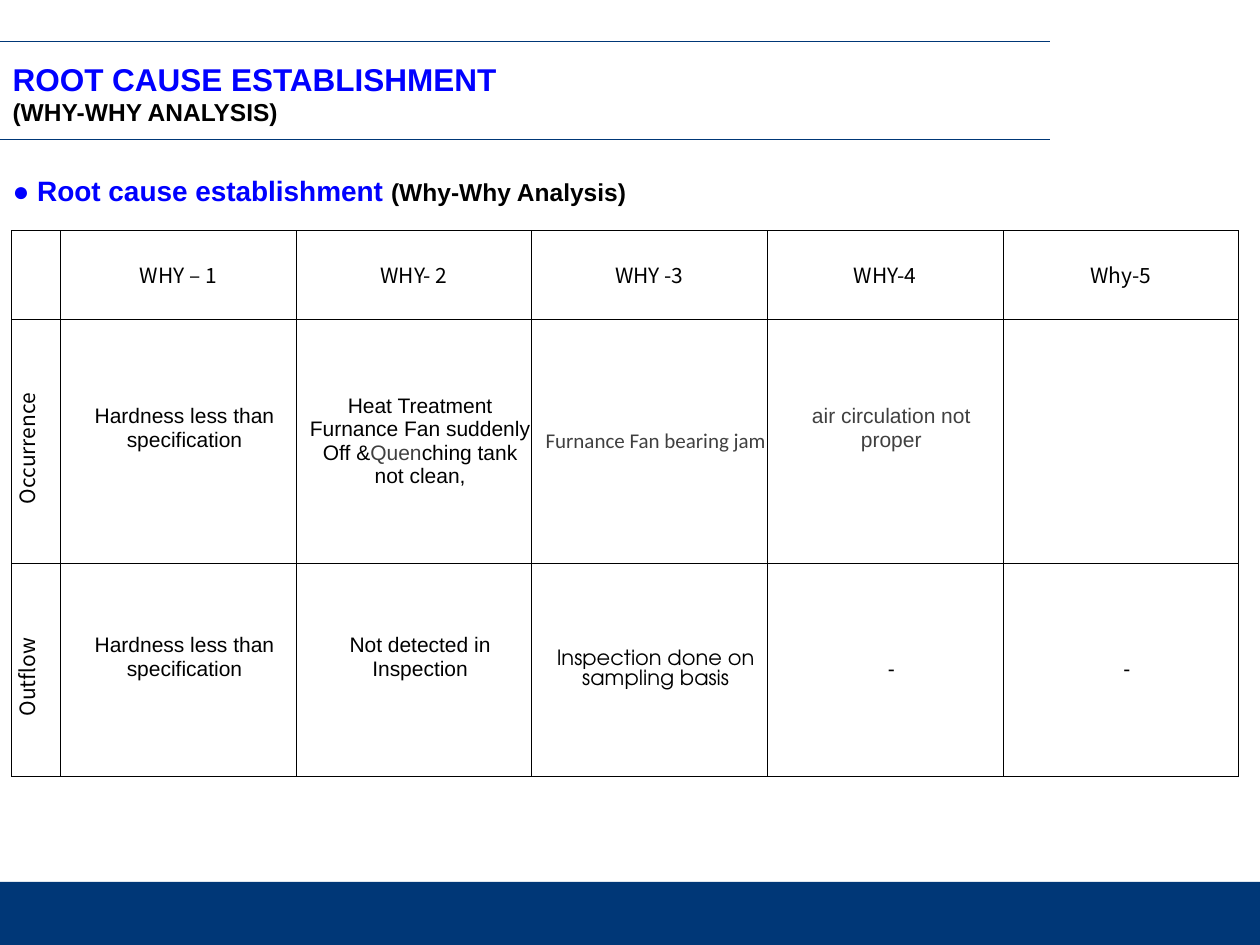
import pptx
import pptx.util
import pptx.dml.color
import pptx.enum.shapes
import pptx.enum.text
import pptx.oxml
import pptx.oxml.ns

Inches, Pt = pptx.util.Inches, pptx.util.Pt
ALIGN = pptx.enum.text.PP_ALIGN
ANCHOR = pptx.enum.text.MSO_ANCHOR

COLORS = {"navy": "003777", "blue": "0000FF", "black": "000000",
          "gray": "404040", "white": "FFFFFF"}
HEAD_FONT = "Noto Sans CJK JP"
SLIDE_W, SLIDE_H = 10, 7.5

# Runs: (text, size, font, colour, bold)
TITLE = [("ROOT CAUSE ESTABLISHMENT \v", 18, "Arial", "blue", True),
         ("(WHY-WHY ANALYSIS)", 14, "Arial", "black", True)]
SUBTITLE = [("● Root cause establishment ", 16, "Arial", "blue", True),
            ("(Why-Why Analysis)", 14, "Arial", "black", True)]

HEADERS = ["WHY – 1", "WHY- 2", "WHY -3", "WHY-4", "Why-5"]
# Each answer: its runs as (text, font, colour), then whether it sits raised
HARDNESS = ([("Hardness less than specification", "Arial", "black")], True)
DASH = ([("-", "Arial", "black")], False)
ANALYSIS = {
    "Occurrence": [
        HARDNESS,
        ([("Heat Treatment Furnance Fan suddenly Off &", "Arial", "black"),
          ("Quen", "Arial", "gray"),
          ("ching tank not clean,", "Arial", "black")], False),
        ([("Furnance Fan bearing jam", "Calibri", "gray")], False),
        ([("air circulation not proper", "Arial", "gray")], True),
        ([], False),
    ],
    "Outflow": [
        HARDNESS,
        ([("Not detected in Inspection", "Arial", "black")], True),
        ([("Inspection done on sampling basis", "TeX Gyre Adventor", "black")], False),
        DASH,
        DASH,
    ],
}
TABLE_LEFT, TABLE_TOP = 0.09, 1.83
COLUMN_WIDTHS = [0.39] + [1.87] * len(HEADERS)
ROW_HEIGHTS = [0.7, 1.94, 1.69]
RULE_HEIGHTS = [0.33, 1.11]
FOOTER_H = 0.5


def rgb(name):
    return pptx.dml.color.RGBColor.from_string(COLORS[name])


def add_runs(paragraph, runs):
    for text, size, font, color, bold in runs:
        run = paragraph.add_run()
        run.text = text.rstrip("\v")
        run.font.size, run.font.name, run.font.bold = Pt(size), font, bold
        run.font.color.rgb = rgb(color)
        if text.endswith("\v"):
            paragraph.add_line_break()


def fill_placeholder(holder, box, runs, anchor):
    holder.left, holder.top, holder.width, holder.height = map(Inches, box)
    frame = holder.text_frame
    frame.auto_size = pptx.enum.text.MSO_AUTO_SIZE.NONE
    frame.word_wrap = True
    frame.vertical_anchor = anchor
    paragraph = frame.paragraphs[0]
    paragraph.alignment = ALIGN.LEFT
    paragraph.space_before = Pt(0)
    props = paragraph._p.get_or_add_pPr()
    props.set("marL", "0")
    props.set("indent", "0")
    props.append(props.makeelement(pptx.oxml.ns.qn("a:buNone"), {}))
    add_runs(paragraph, runs)


def add_borders(cell):
    props = cell._tc.get_or_add_tcPr()
    for index, side in enumerate(("lnL", "lnR", "lnT", "lnB")):
        props.insert(index, pptx.oxml.parse_xml(
            f'<a:{side} {pptx.oxml.ns.nsdecls("a")} w="{Pt(0.25)}"><a:solidFill>'
            f'<a:srgbClr val="{COLORS["black"]}"/></a:solidFill></a:{side}>'))


def fill_cell(cell, runs, left=0, right=0, bottom=0):
    cell.vertical_anchor = ANCHOR.MIDDLE
    cell.margin_left, cell.margin_right = Inches(left), Inches(right)
    cell.margin_top, cell.margin_bottom = 0, Inches(bottom)
    paragraph = cell.text_frame.paragraphs[0]
    paragraph.alignment = ALIGN.CENTER
    add_runs(paragraph, [(text, 12, font, color, False) for text, font, color in runs])


def add_why_table(slide):
    table = slide.shapes.add_table(
        len(ROW_HEIGHTS), len(COLUMN_WIDTHS), Inches(TABLE_LEFT), Inches(TABLE_TOP),
        Inches(sum(COLUMN_WIDTHS)), Inches(sum(ROW_HEIGHTS))).table
    table.first_row = table.horz_banding = False
    for column, width in zip(table.columns, COLUMN_WIDTHS):
        column.width = Inches(width)
    for row, height in zip(table.rows, ROW_HEIGHTS):
        row.height = Inches(height)
    for cell in table.iter_cells():
        cell.fill.solid()
        cell.fill.fore_color.rgb = rgb("white")
        add_borders(cell)

    for col, header in enumerate(HEADERS, 1):
        fill_cell(table.cell(0, col), [(header, HEAD_FONT, "black")])
    for row, (label, answers) in enumerate(ANALYSIS.items(), 1):
        label_cell = table.cell(row, 0)
        fill_cell(label_cell, [(label, HEAD_FONT, "black")], right=0.12)
        label_cell._tc.get_or_add_tcPr().set("vert", "vert270")
        for col, (runs, raised) in enumerate(answers, 1):
            fill_cell(table.cell(row, col), runs, left=0.1, bottom=0.2 if raised else 0)


def add_frame(slide):
    """Draw the footer band and the two rules around the title."""
    footer = slide.shapes.add_shape(
        pptx.enum.shapes.MSO_SHAPE.RECTANGLE, 0, Inches(SLIDE_H - FOOTER_H),
        Inches(SLIDE_W), Inches(FOOTER_H))
    footer.shadow.inherit = False
    footer.fill.solid()
    footer.fill.fore_color.rgb = rgb("navy")
    footer.line.fill.background()
    for y in RULE_HEIGHTS:
        rule = slide.shapes.add_connector(
            pptx.enum.shapes.MSO_CONNECTOR.STRAIGHT, 0, Inches(y),
            Inches(SLIDE_W * 5 / 6), Inches(y))
        rule.line.color.rgb = rgb("navy")
        rule.line.width = Pt(0.75)
        props = rule._element.spPr
        props.append(props.makeelement(pptx.oxml.ns.qn("a:effectLst"), {}))


def main():
    deck = pptx.Presentation()
    deck.slide_width, deck.slide_height = Inches(SLIDE_W), Inches(SLIDE_H)
    slide = deck.slides.add_slide(deck.slide_layouts[1])
    add_frame(slide)
    fill_placeholder(slide.shapes.title, (0, 0.39, SLIDE_W, 0.7), TITLE, ANCHOR.MIDDLE)
    fill_placeholder(slide.placeholders[1], (0, 1.33, 7.58, 0.32), SUBTITLE, ANCHOR.TOP)
    add_why_table(slide)
    deck.save("out.pptx")


if __name__ == "__main__":
    main()
